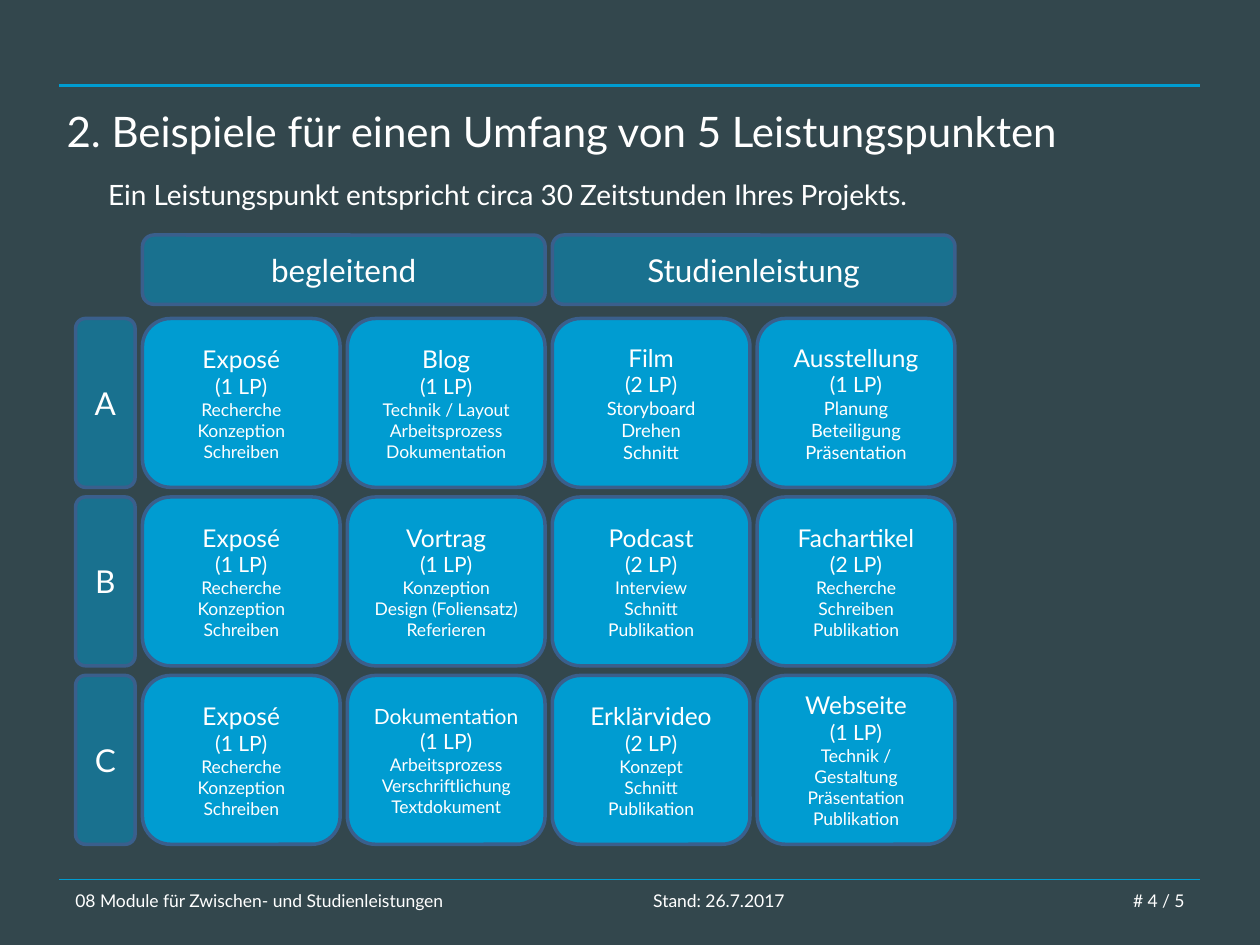
from dataclasses import dataclass

from lxml.etree import SubElement as Sub
from pptx import Presentation
from pptx.dml.color import RGBColor as Rgb
from pptx.enum.shapes import MSO_CONNECTOR as Conn, MSO_SHAPE as Kind
from pptx.enum.text import MSO_ANCHOR as Anchor, PP_ALIGN as Align
from pptx.oxml.ns import qn
from pptx.util import Pt


@dataclass(frozen=True)
class Theme:
    font: str = "Lato"
    back: Rgb = Rgb(0x33, 0x47, 0x4D)
    ink: Rgb = Rgb(0xFF, 0xFF, 0xFF)
    blue: Rgb = Rgb(0x00, 0x9C, 0xD1)
    edge: Rgb = Rgb(0x3A, 0x5F, 0x8C)
    title: float = 24
    head: float = 18
    lead: float = 16
    name: float = 14
    mark: float = 12
    body: float = 10
    large: float = 10.5
    foot: float = 10


THEME = Theme()
LEFT, TOP = 81.4, 182
WIDE, HIGH = 113, 96.5
STEP, DROP = 117.1, 102

START = ("Exposé", "(1 LP)", "Recherche", "Konzeption", "Schreiben")
ROWS = {
    "A": (
        START,
        ("Blog", "(1 LP)", "Technik / Layout", "Arbeitsprozess", "Dokumentation"),
        ("Film", "(2 LP)", "Storyboard", "Drehen", "Schnitt"),
        ("Ausstellung", "(1 LP)", "Planung", "Beteiligung", "Präsentation"),
    ),
    "B": (
        START,
        ("Vortrag", "(1 LP)", "Konzeption", "Design (Foliensatz)", "Referieren"),
        ("Podcast", "(2 LP)", "Interview", "Schnitt", "Publikation"),
        ("Fachartikel", "(2 LP)", "Recherche", "Schreiben", "Publikation"),
    ),
    "C": (
        START,
        ("Dokumentation", "(1 LP)", "Arbeitsprozess", "Verschriftlichung", "Textdokument"),
        ("Erklärvideo", "(2 LP)", "Konzept", "Schnitt", "Publikation"),
        ("Webseite", "(1 LP)", "Technik / Gestaltung", "Präsentation", "Publikation"),
    ),
}
NAMES = {"Dokumentation": THEME.mark}
BODIES = {"Film": THEME.large, "Ausstellung": THEME.large}


def put(item, form):
    for key, value in form.items():
        setattr(item, key, value)


def write(frame, lines, form, anchor=Anchor.MIDDLE):
    put(frame, {"word_wrap": True, "vertical_anchor": anchor})
    for i, (text, size) in enumerate(lines):
        para = frame.add_paragraph() if i else frame.paragraphs[0]
        put(para, form)
        run = para.add_run()
        run.text = text
        put(run.font, {"name": THEME.font, "size": Pt(size)})
        run.font.color.rgb = THEME.ink


def add_text(slide, area, text, size, form, anchor=Anchor.MIDDLE):
    box = slide.shapes.add_textbox(*map(Pt, area))
    write(box.text_frame, [(text, size)], form, anchor)


def add_tile(slide, area, lines, alpha=None):
    tile = slide.shapes.add_shape(Kind.ROUNDED_RECTANGLE, *map(Pt, area))
    tile.shadow.inherit = False
    tile.fill.solid()
    tile.fill.fore_color.rgb = THEME.blue
    if alpha:
        color = tile.fill._xPr.find(qn("a:solidFill"))[0]
        Sub(color, qn("a:alpha"), val=str(alpha * 1000))
    tile.line.color.rgb = THEME.edge
    tile.line.width = Pt(2)
    write(tile.text_frame, lines, {"alignment": Align.CENTER})


def add_rule(slide, y, width):
    rule = slide.shapes.add_connector(Conn.STRAIGHT, Pt(34), Pt(y), Pt(686), Pt(y))
    rule.line.color.rgb = THEME.blue
    rule.line.width = Pt(width)
    Sub(rule._element.spPr, qn("a:effectLst"))


def add_card(slide, x, y, lines):
    name = lines[0]
    body = BODIES.get(name, THEME.body)
    sizes = [NAMES.get(name, THEME.name), THEME.mark] + [body] * (len(lines) - 2)
    add_tile(slide, (x, y, WIDE, HIGH), list(zip(lines, sizes)))


def add_grid(slide):
    for i, text in enumerate(("begleitend", "Studienleistung")):
        area = (LEFT + 2 * i * STEP, 134.3, STEP + WIDE, 39.6)
        add_tile(slide, area, [(text, THEME.head)], 50)
    for row, (mark, cards) in enumerate(ROWS.items()):
        y = TOP + row * DROP
        add_tile(slide, (43.2, y, 34, HIGH), [(mark, THEME.head)], 50)
        for col, lines in enumerate(cards):
            add_card(slide, LEFT + col * STEP, y, lines)


def add_foot(slide):
    parts = (
        (36, 273, "08 Module für Zwischen- und Studienleistungen", Align.LEFT),
        (263.5, 294.5, "Stand: 26.7.2017", Align.CENTER),
        (632, 52, "# 4 / 5", Align.RIGHT),
    )
    for x, width, text, align in parts:
        add_text(slide, (x, 500.4, width, 28.8), text, THEME.foot, {"alignment": align})


def main():
    deck = Presentation()
    put(deck, {"slide_width": Pt(720), "slide_height": Pt(540)})
    slide = deck.slides.add_slide(deck.slide_layouts[6])
    slide.background.fill.solid()
    slide.background.fill.fore_color.rgb = THEME.back
    add_rule(slide, 49, 1.5)
    add_text(slide, (31, 54.7, 629, 39.6),
             "2. Beispiele für einen Umfang von 5 Leistungspunkten",
             THEME.title, {"alignment": Align.LEFT})
    add_text(slide, (54.7, 98, 606, 26.6),
             "Ein Leistungspunkt entspricht circa 30 Zeitstunden Ihres Projekts.",
             THEME.lead, {"space_before": Pt(6)}, Anchor.TOP)
    add_grid(slide)
    add_rule(slide, 502.5, 1)
    add_foot(slide)
    deck.save("out.pptx")


if __name__ == "__main__":
    main()
